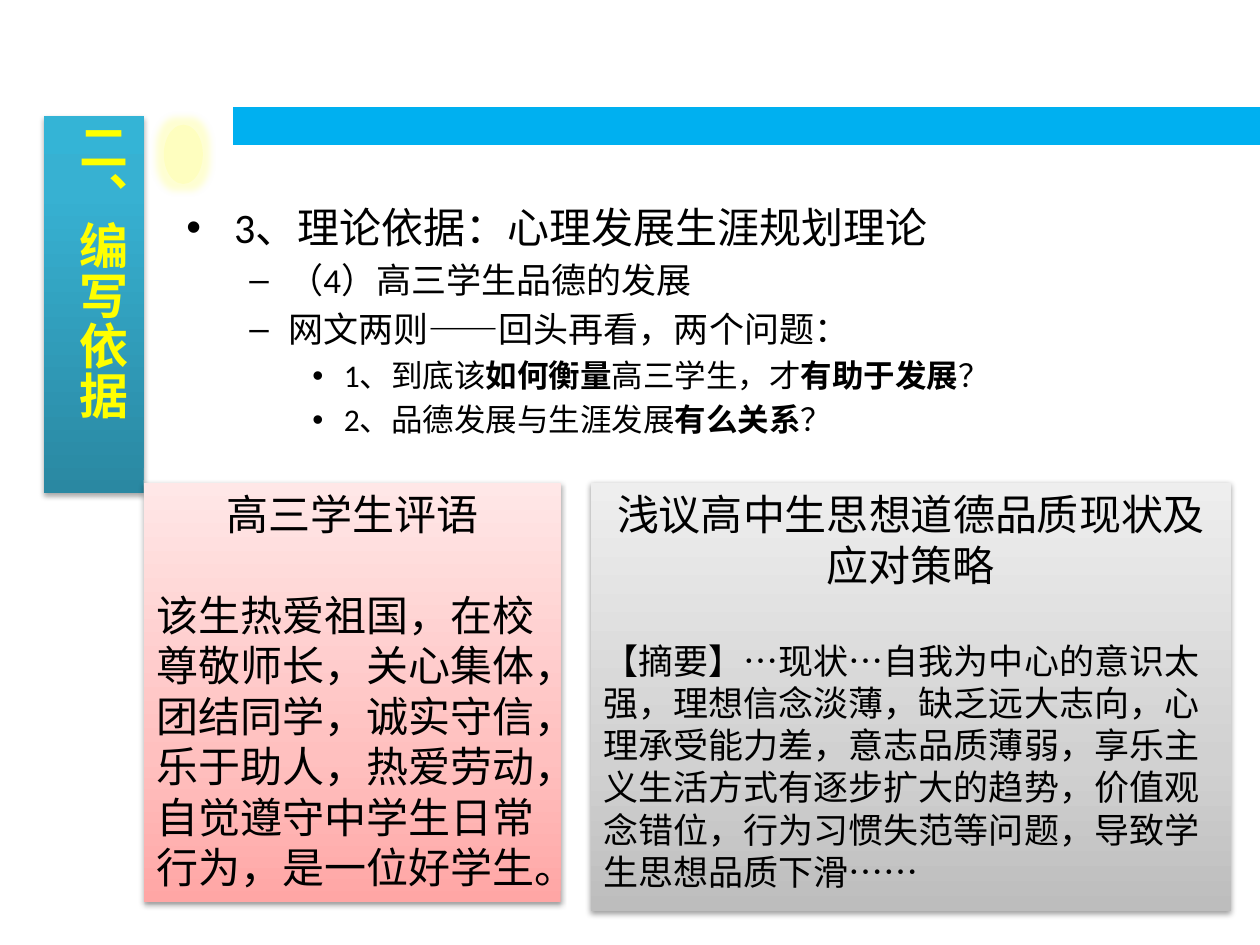
from dataclasses import dataclass

from lxml.etree import SubElement as Sub
from pptx import Presentation
from pptx.dml.color import RGBColor as Rgb
from pptx.enum.shapes import MSO_SHAPE as Kind
from pptx.enum.text import MSO_ANCHOR as Anchor, MSO_AUTO_SIZE as Fit, PP_ALIGN as Align
from pptx.oxml.ns import qn
from pptx.util import Emu, Inches, Pt


@dataclass(frozen=True)
class Theme:
    latin: str = "Calibri"
    cjk: str = "Noto Sans CJK SC"
    ink: str = "000000"
    bar: str = "00B0F0"
    glow: str = "FFFF00"
    edge: str = "E78738"
    teal: tuple = ((0, "2A88A2"), (80, "37B1D2"), (100, "34B4D6"))
    rose: tuple = ((0, "FFA6A5"), (35, "FFC0BF"), (100, "FFE7E7"))
    gray: tuple = ((0, "BDBDBD"), (35, "D1D1D1"), (100, "EEEEEE"))
    title: int = 28
    big: int = 24
    mid: int = 20
    small: int = 18


T = Theme()
COLS, ROWS = 100, 75
WIDE, HIGH = Inches(10), Inches(7.5)
# Per level: text size, left margin and hanging indent in inches, bullet
LEVELS = ((T.big, 0.38, 0.38, "•"), (T.mid, 0.81, 0.31, "–"), (T.small, 1.25, 0.25, "•"))

OUTLINE = (
    (0, "3、理论依据：心理发展生涯规划理论"),
    (1, "（4）高三学生品德的发展"),
    (1, "网文两则——回头再看，两个问题："),
    (2, "1、到底该*如何衡量*高三学生，才*有助于发展*？"),
    (2, "2、品德发展与生涯发展*有么关系*？"),
)
PANELS = (
    ((11.4, 38.3, 33.1, 33.3), T.rose, T.big, "高三学生评语",
     "该生热爱祖国，在校尊敬师长，关心集体，团结同学，诚实守信，乐于助人，"
     "热爱劳动，自觉遵守中学生日常行为，是一位好学生。"),
    ((46.9, 38.3, 50.8, 34), T.gray, T.mid, "浅议高中生思想道德品质现状及应对策略",
     "【摘要】…现状…自我为中心的意识太强，理想信念淡薄，缺乏远大志向，"
     "心理承受能力差，意志品质薄弱，享乐主义生活方式有逐步扩大的趋势，"
     "价值观念错位，行为习惯失范等问题，导致学生思想品质下滑……"),
)


def span(col, row, cols, rows):
    """Turn grid columns and rows into left, top, width, height."""
    return (Emu(int(WIDE * col / COLS)), Emu(int(HIGH * row / ROWS)),
            Emu(int(WIDE * cols / COLS)), Emu(int(HIGH * rows / ROWS)))


def tint(node, color, alpha=100):
    clr = Sub(node, qn("a:srgbClr"), val=color)
    if alpha < 100:
        Sub(clr, qn("a:alpha"), val=str(alpha * 1000))


def cast(node, alpha, blur, dist):
    """Add a shadow that falls straight down; lengths in points."""
    tint(Sub(node, qn("a:outerShdw"), blurRad=str(Pt(blur)), dist=str(Pt(dist)),
             dir="5400000", algn="t", rotWithShape="0"), T.ink, alpha)


def plain(shape):
    """Remove line and shadow, and return the empty effect list."""
    shape.line.fill.background()
    shape.shadow.inherit = False
    return shape._element.spPr.find(qn("a:effectLst"))


def fade(shape, stops, alpha, dist):
    """Fill from bottom to top through the stops, with a soft shadow."""
    grad = Sub(shape._element.spPr, qn("a:gradFill"), rotWithShape="1")
    row = Sub(grad, qn("a:gsLst"))
    for pos, color in stops:
        tint(Sub(row, qn("a:gs"), pos=str(pos * 1000)), color)
    Sub(grad, qn("a:lin"), ang="16200000", scaled="0")
    cast(plain(shape), alpha, 3.1, dist)


def flat(slide, kind, box, color):
    shape = slide.shapes.add_shape(kind, *span(*box))
    shape.fill.solid()
    shape.fill.fore_color.rgb = Rgb.from_string(color)
    return shape, plain(shape)


def write(para, text, size, color=T.ink, face=T.latin, bold=False, align=None, before=None):
    """Write text into a paragraph; parts between asterisks are bold."""
    para.alignment = align
    if before is not None:
        para.space_before = Pt(before)
    for num, part in enumerate(text.split("*")):
        run = para.add_run()
        run.text = part
        font = run.font
        font.size, font.name, font.bold = Pt(size), face, bold or num % 2 == 1
        font.color.rgb = Rgb.from_string(color)
        Sub(run._r.get_or_add_rPr(), qn("a:ea"), typeface=T.cjk)


def mark(para, left, hang, sign):
    props = para._p.get_or_add_pPr()
    props.set("marL", str(Inches(left)))
    props.set("indent", str(-Inches(hang)))
    Sub(props, qn("a:buFont"), typeface="Arial")
    Sub(props, qn("a:buChar"), char=sign)


def decor(slide):
    flat(slide, Kind.RECTANGLE, (18.5, 8.5, 81.5, 3), T.bar)
    spot, effect = flat(slide, Kind.OVAL, (13, 9.9, 3.1, 4.7), T.glow)
    tint(Sub(effect, qn("a:glow"), rad=str(Pt(8))), T.glow, 18)
    clr = spot._element.spPr.find(qn("a:solidFill"))[0]
    Sub(clr, qn("a:alpha"), val="9000")


def banner(slide, text):
    shape = slide.shapes.title
    shape.left, shape.top, shape.width, shape.height = span(3.5, 9.2, 7.9, 29.9)
    fade(shape, T.teal, 35, 1.8)
    frame = shape.text_frame
    frame.auto_size = Fit.NONE
    frame.vertical_anchor = Anchor.MIDDLE
    frame.margin_left = frame.margin_right = 0
    frame._txBody.bodyPr.set("vert", "eaVert")
    para = frame.paragraphs[0]
    para.line_spacing = Pt(24)
    write(para, text, T.title, T.glow, T.cjk, bold=True, align=Align.CENTER)
    props = para.runs[0]._r.get_or_add_rPr()
    props.set("spc", "50")
    edge = props.makeelement(qn("a:ln"), {"w": str(Pt(1))})
    tint(Sub(edge, qn("a:solidFill")), T.edge)
    props.insert(0, edge)
    effect = props.makeelement(qn("a:effectLst"), {})
    cast(effect, 40, 2, 1)
    props.insert(2, effect)


def points(slide):
    frame = slide.shapes.add_textbox(*span(13.8, 15.5, 81.2, 51.5)).text_frame
    frame.word_wrap = True
    for num, (level, text) in enumerate(OUTLINE):
        para = frame.add_paragraph() if num else frame.paragraphs[0]
        size, *form = LEVELS[level]
        para.level = level
        mark(para, *form)
        write(para, text, size, before=size * 0.2 if num else None)


def panel(slide, box, stops, size, head, body):
    shape = slide.shapes.add_shape(Kind.RECTANGLE, *span(*box))
    fade(shape, stops, 38, 1.6)
    frame = shape.text_frame
    frame.word_wrap = True
    frame.auto_size = Fit.SHAPE_TO_FIT_TEXT
    frame.vertical_anchor = Anchor.TOP
    write(frame.paragraphs[0], head, T.big, align=Align.CENTER)
    write(frame.add_paragraph(), body, size, align=Align.LEFT, before=T.big * 1.2)


def main():
    deck = Presentation()
    deck.slide_width, deck.slide_height = WIDE, HIGH
    slide = deck.slides.add_slide(deck.slide_layouts[5])
    decor(slide)
    points(slide)
    banner(slide, "二、编写依据")
    for item in PANELS:
        panel(slide, *item)
    deck.save("out.pptx")


if __name__ == "__main__":
    main()
